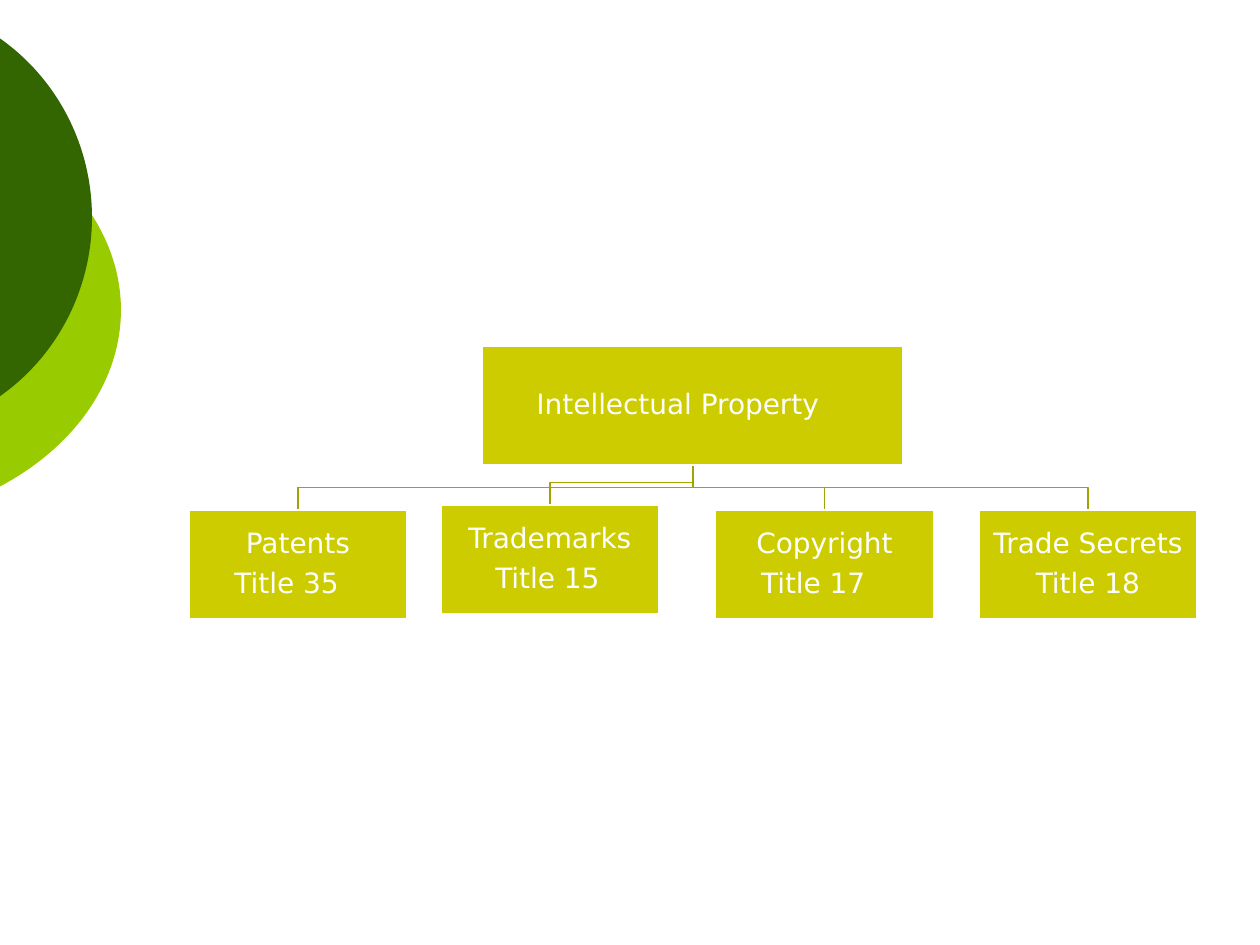
from dataclasses import dataclass

from pptx import Presentation
from pptx.dml.color import RGBColor as RGB
from pptx.enum.shapes import MSO_SHAPE as SHAPE
from pptx.enum.text import MSO_ANCHOR as ANCHOR, PP_ALIGN as ALIGN
from pptx.util import Inches, Pt


@dataclass(frozen=True)
class Theme:
    dark: RGB = RGB(0x33, 0x66, 0x00)
    lime: RGB = RGB(0x99, 0xCC, 0x00)
    box: RGB = RGB(0xCC, 0xCC, 0x00)
    branch: RGB = RGB(0xA3, 0xA3, 0x00)
    white: RGB = RGB(0xFF, 0xFF, 0xFF)
    font: str = "DejaVu Sans"
    size: Pt = Pt(16)
    line: Pt = Pt(1)
    gap: Pt = Pt(6)


class OrgChart:
    """Draws the organisation chart and its decoration on one slide."""

    def __init__(self, slide, theme):
        self.shapes = slide.shapes
        self.theme = theme

    def shape(self, kind, color, *bounds):
        sp = self.shapes.add_shape(kind, *map(Inches, bounds))
        sp.shadow.inherit = False
        sp.fill.solid()
        sp.fill.fore_color.rgb = color
        return sp

    def oval(self, color, *bounds):
        self.shape(SHAPE.OVAL, color, *bounds).line.fill.background()

    def branch(self, start, end):
        (x1, y1), (x2, y2) = start, end
        bend = y2 - 0.18
        builder = self.shapes.build_freeform(Inches(x1), Inches(y1))
        corners = [(x1, bend), (x2, bend), (x2, y2)]
        builder.add_line_segments([(Inches(x), Inches(y)) for x, y in corners], close=False)
        sp = builder.convert_to_shape()
        sp.shadow.inherit = False
        sp.fill.background()
        sp.line.color.rgb = self.theme.branch
        sp.line.width = self.theme.line

    def box(self, bounds, lines, shift=0.0):
        th = self.theme
        sp = self.shape(SHAPE.RECTANGLE, th.box, *bounds)
        sp.line.color.rgb = th.white
        sp.line.width = th.line
        tf = sp.text_frame
        tf.word_wrap = True
        tf.vertical_anchor = ANCHOR.MIDDLE
        tf.margin_left = tf.margin_top = tf.margin_bottom = Inches(0.01)
        tf.margin_right = Inches(0.01 + shift)
        tf.text = "\n".join(lines)
        for p in tf.paragraphs:
            p.alignment = ALIGN.CENTER
            p.line_spacing = 0.9
            p.space_after = th.gap
            p.font.name = th.font
            p.font.size = th.size
            p.font.color.rgb = th.white
        for p in tf.paragraphs[:-1]:
            p._p.get_or_add_pPr().set("marL", str(Inches(shift)))


def main():
    prs = Presentation()
    prs.slide_width, prs.slide_height = Inches(10), Inches(7.5)
    theme = Theme()
    chart = OrgChart(prs.slides.add_slide(prs.slide_layouts[6]), theme)

    chart.oval(theme.lime, -3.54, 0.75, 4.5, 3.42)
    chart.oval(theme.dark, -2.65, 0, 3.38, 3.45)

    width, height = 1.73, 0.86
    children = [
        (1.5, 4.05, "Patents", "Title 35", 0.18),
        (3.5, 4.01, "Trademarks", "Title 15", 0.04),
        (5.68, 4.05, "Copyright", "Title 17", 0.18),
        (7.77, 4.05, "Trade Secrets", "Title 18", 0),
    ]
    for left, top, *_ in reversed(children):
        chart.branch((5.5, 3.69), (left + width / 2, top))
    chart.box((3.83, 2.75, 3.34, 0.94), ["Intellectual Property"], 0.24)
    for left, top, name, title, shift in children:
        chart.box((left, top, width, height), [name, title], shift)

    prs.save("out.pptx")


if __name__ == "__main__":
    main()
